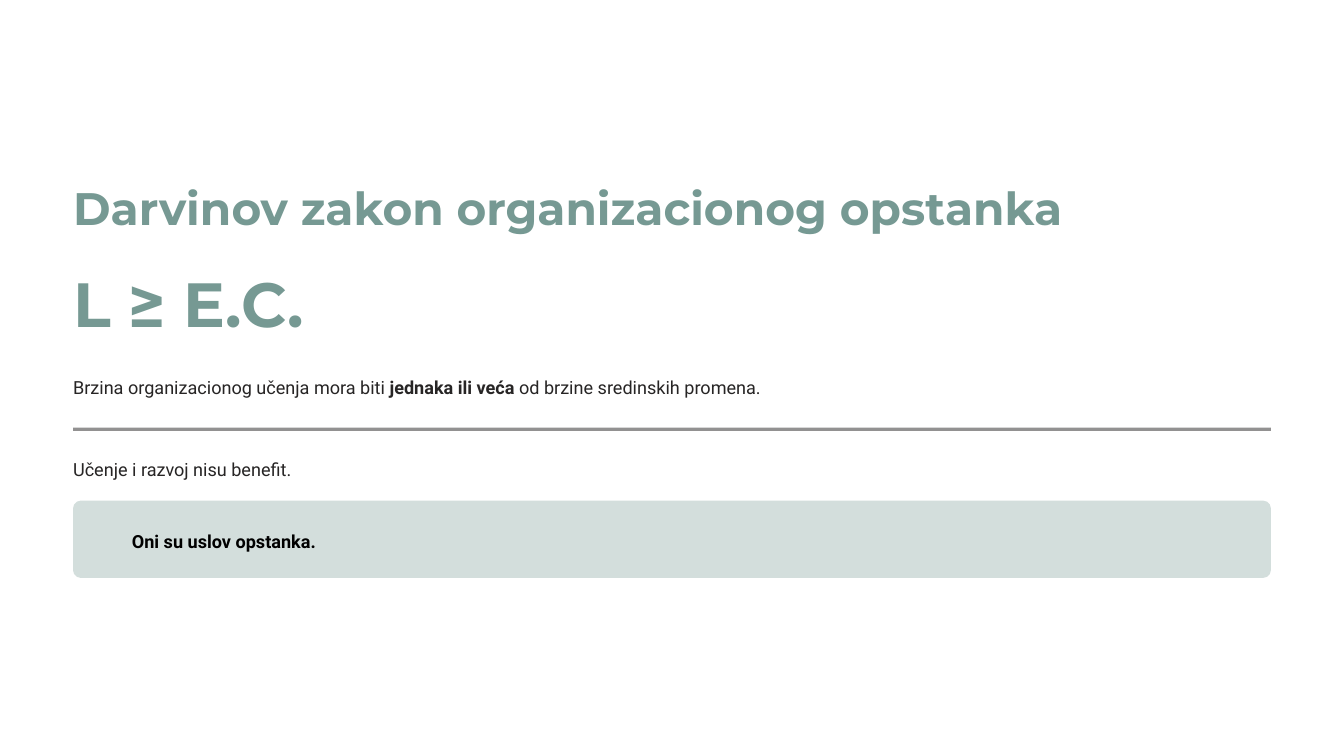
from lxml.etree import SubElement
from pptx import Presentation
from pptx.dml.color import RGBColor as RGB
from pptx.enum.shapes import MSO_SHAPE as Kind
from pptx.oxml.ns import qn
from pptx.util import Inches, Pt

COLORS = {
    "white": "FFFFFF",
    "sage": "769993",
    "ink": "272525",
    "mist": "D3DEDC",
    "black": "000000",
}
LEFT, WIDTH = 0.87, 14.26


def color(name):
    return RGB.from_string(COLORS[name])


def add_text(slide, box, runs, font, size, lead, tint):
    """Add one line of text; runs are (text, bold) pairs."""
    frame = slide.shapes.add_textbox(*map(Inches, box)).text_frame
    frame.word_wrap = False
    frame.margin_left = frame.margin_right = 0
    frame.margin_top = frame.margin_bottom = 0
    para = frame.paragraphs[0]
    para.line_spacing = Pt(lead)
    para.font.name = font
    para.font.size = Pt(size)
    para.font.color.rgb = color(tint)
    for text, bold in runs:
        run = para.add_run()
        run.text = text
        run.font.bold = bold


def add_head(slide, box, text, size, lead):
    add_text(slide, box, [(text, True)], "Montserrat", size, lead, "sage")


def add_body(slide, left, top, width, runs, tint="ink"):
    box = (left, top, width, 0.35)
    add_text(slide, box, runs, "Roboto", 15.5, 25, tint)


def add_block(slide, kind, top, height, tint):
    """Add a plain filled shape across the content width."""
    box = map(Inches, (LEFT, top, WIDTH, height))
    shape = slide.shapes.add_shape(kind, *box)
    shape.shadow.inherit = False
    shape.fill.solid()
    shape.fill.fore_color.rgb = color(tint)
    shape.line.fill.background()
    return shape


def fade(shape, percent):
    """Set the opacity of a solid fill."""
    tone = shape.fill._xPr.find(f"{qn('a:solidFill')}/{qn('a:srgbClr')}")
    SubElement(tone, qn("a:alpha"), val=str(percent * 1000))


def main():
    deck = Presentation()
    deck.slide_width, deck.slide_height = Inches(16), Inches(9)
    slide = deck.slides.add_slide(deck.slide_layouts[6])
    slide.background.fill.solid()
    slide.background.fill.fore_color.rgb = color("white")

    # Title and formula
    add_head(slide, (LEFT, 2.12, 11.78, 0.68),
             "Darvinov zakon organizacionog opstanka", 39, 48.5)
    add_head(slide, (LEFT, 3.12, 7.49, 0.94), "L ≥ E.C.", 53.5, 67)

    # Meaning of the formula
    add_body(slide, LEFT, 4.39, WIDTH, [
        ("Brzina organizacionog učenja mora biti ", False),
        ("jednaka ili veća", True),
        (" od brzine sredinskih promena.", False),
    ])

    # Divider
    fade(add_block(slide, Kind.RECTANGLE, 5.09, 0.04, "ink"), 50)

    # Conclusion with callout
    add_body(slide, LEFT, 5.37, WIDTH,
             [("Učenje i razvoj nisu benefit.", False)])
    card = add_block(slide, Kind.ROUNDED_RECTANGLE, 5.96, 0.92, "mist")
    card.adjustments[0] = 0.1
    add_body(slide, 1.57, 6.23, 13.34,
             [("Oni su uslov opstanka.", True)], "black")

    deck.save("out.pptx")


if __name__ == "__main__":
    main()
